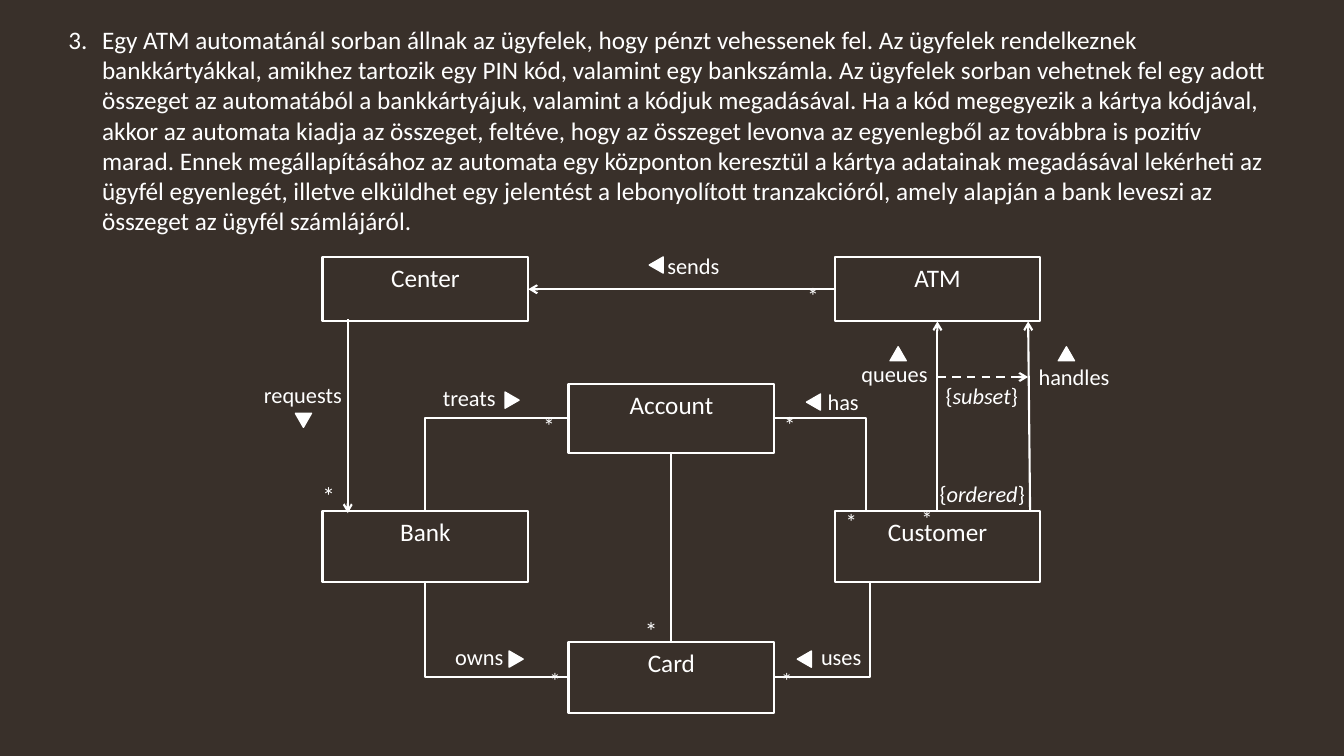
import pptx
import pptx.util
import pptx.dml.color
import pptx.enum.dml
import pptx.enum.shapes
import pptx.enum.text
import pptx.oxml.ns
import pptx.oxml.xmlchemy

Pt = pptx.util.Pt
SHAPES = pptx.enum.shapes.MSO_SHAPE
LINES = pptx.enum.shapes.MSO_CONNECTOR
ALIGN = pptx.enum.text.PP_ALIGN
BROWN = pptx.dml.color.RGBColor(0x39, 0x30, 0x2A)
WHITE = pptx.dml.color.RGBColor(0xFF, 0xFF, 0xFF)

TASK_LINES = [
    "3.\tEgy ATM automatánál sorban állnak az ügyfelek, hogy pénzt vehessenek fel. Az ügyfelek rendelkeznek",
    "bankkártyákkal, amikhez tartozik egy PIN kód, valamint egy bankszámla. Az ügyfelek sorban vehetnek fel egy adott",
    "összeget az automatából a bankkártyájuk, valamint a kódjuk megadásával. Ha a kód megegyezik a kártya kódjával,",
    "akkor az automata kiadja az összeget, feltéve, hogy az összeget levonva az egyenlegből az továbbra is pozitív",
    "marad. Ennek megállapításához az automata egy központon keresztül a kártya adatainak megadásával lekérheti az",
    "ügyfél egyenlegét, illetve elküldhet egy jelentést a lebonyolított tranzakcióról, amely alapján a bank leveszi az",
    "összeget az ügyfél számlájáról.",
]

CLASS_WIDTH = 147
LEFT, MIDDLE, RIGHT = 50.4, 226.1, 416.2
LEFT_EDGE, MIDDLE_EDGE = LEFT + CLASS_WIDTH, MIDDLE + CLASS_WIDTH
BANK_AXIS, CARD_AXIS = LEFT + CLASS_WIDTH / 2, MIDDLE + CLASS_WIDTH / 2
QUEUE_AXIS, HANDLE_AXIS, REQUEST_AXIS = 489.6, 554.4, 68.4
ATM_BOTTOM, BANK_TOP, BANK_BOTTOM = 53.6, 189, 240
ACCOUNT_BOTTOM, CARD_TOP = 147.3, 282.6
SENDS_LEVEL, ACCOUNT_LEVEL, CARD_LEVEL, SUBSET_LEVEL = 30.6, 122.8, 307.8, 93.3

CLASSES = [
    ("Center", LEFT, 7.6, 46),
    ("ATM", RIGHT, 7.6, 46),
    ("Account", MIDDLE, 98.3, 49),
    ("Bank", LEFT, BANK_TOP, 51),
    ("Customer", RIGHT, BANK_TOP, 51),
    ("Card", MIDDLE, CARD_TOP, 51),
]
ELBOWS = [
    (MIDDLE_EDGE, ACCOUNT_LEVEL, 438.5, BANK_TOP),
    (MIDDLE_EDGE, CARD_LEVEL, 441.4, BANK_BOTTOM),
    (MIDDLE, ACCOUNT_LEVEL, BANK_AXIS, BANK_TOP),
    (MIDDLE, CARD_LEVEL, BANK_AXIS, BANK_BOTTOM),
]
ARROWS = [
    (RIGHT, SENDS_LEVEL, LEFT_EDGE, SENDS_LEVEL),
    (REQUEST_AXIS, 52.2, REQUEST_AXIS, 190.5),
    (QUEUE_AXIS, BANK_TOP, QUEUE_AXIS, ATM_BOTTOM),
    (555.8, BANK_TOP, HANDLE_AXIS, ATM_BOTTOM),
]
ROLES = [
    ("queues", 427.7, 77.4, 62.6, 455.8, 71.7, 0),
    ("handles", 554.4, 79.6, 65.5, 576, 71.7, 0),
    ("sends", 289.4, 0.4, 51.8, 283, 8.3, 270),
    ("owns", 137.5, 279.8, 49.7, 182.9, 289.8, 90),
    ("has", 403.9, 97.6, 36.7, 395.3, 106.2, 270),
    ("requests", 0.7, 92.6, 71.3, 31, 119.2, 180),
    ("treats", 128.9, 94.7, 52.6, 180, 104.8, 90),
    ("uses", 398.9, 279.8, 43.9, 388.8, 289.8, 270),
]
CONSTRAINTS = [("subset", 487.4, 93.3, 67.7), ("ordered", 483.1, 163.1, 77)]
LOW_STARS = [(470.2, 166.7), (204.5, 281.9), (370.1, 281.9), (372.2, 99),
             (416.2, 168.9), (388.8, 6.9), (200.2, 99.8)]
PLAIN_STARS = [(43.2, 163.8), (273.6, 260.3)]


def add_run(paragraph, text, size, **formats):
    """Append a white Calibri run to the paragraph."""
    run = paragraph.add_run()
    run.text = text
    for name, value in {"name": "Calibri", "size": Pt(size), **formats}.items():
        setattr(run.font, name, value)
    run.font.color.rgb = WHITE
    return run


def add_label(slide, left, top, width, height, alignment=ALIGN.CENTER):
    """Add an unwrapped text box and return its paragraph."""
    frame = slide.shapes.add_textbox(Pt(left), Pt(top), Pt(width), Pt(height)).text_frame
    formats = {"word_wrap": False, "auto_size": pptx.enum.text.MSO_AUTO_SIZE.SHAPE_TO_FIT_TEXT}
    for name, value in formats.items():
        setattr(frame, name, value)
    frame.paragraphs[0].alignment = alignment
    return frame.paragraphs[0]


def add_class(slide, name, left, top, width, height):
    """Draw an outlined class box with its name at the top."""
    shape = slide.shapes.add_shape(SHAPES.RECTANGLE, Pt(left), Pt(top), Pt(width), Pt(height))
    shape.shadow.inherit = False
    shape.fill.background()
    shape.line.color.rgb = WHITE
    shape.line.width = Pt(1.5)
    shape.text_frame.vertical_anchor = pptx.enum.text.MSO_ANCHOR.TOP
    paragraph = shape.text_frame.paragraphs[0]
    paragraph.alignment = ALIGN.CENTER
    add_run(paragraph, name, 18)


def add_pointer(slide, left, top, rotation):
    """Draw the small triangle that gives a role its reading direction."""
    shape = slide.shapes.add_shape(SHAPES.ISOSCELES_TRIANGLE, Pt(left), Pt(top), Pt(11.5), Pt(10))
    shape.shadow.inherit = False
    shape.rotation = rotation
    shape.fill.solid()
    shape.fill.fore_color.rgb = WHITE
    shape.line.color.rgb = WHITE
    shape.line.width = Pt(1)


def add_link(slide, ends, arrow=False, elbow=False, dashed=False):
    """Draw a connector, optionally bent once, dashed or with an arrowhead."""
    kind = LINES.ELBOW if elbow else LINES.STRAIGHT
    link = slide.shapes.add_connector(kind, *[Pt(value) for value in ends])
    link.line.color.rgb = WHITE
    link.line.width = Pt(1.5)
    if dashed:
        link.line.dash_style = pptx.enum.dml.MSO_LINE.DASH
    properties = link._element.spPr
    if elbow:
        properties.find(pptx.oxml.ns.qn("a:prstGeom")).set("prst", "bentConnector2")
    if arrow:
        tail = pptx.oxml.xmlchemy.OxmlElement("a:tailEnd")
        tail.set("type", "arrow")
        link.line._get_or_add_ln().append(tail)
    properties.append(pptx.oxml.xmlchemy.OxmlElement("a:effectLst"))


def add_task(slide, left, top, width, height):
    """Write the numbered task with a hanging indent."""
    frame = slide.shapes.add_textbox(Pt(left), Pt(top), Pt(width), Pt(height)).text_frame
    frame.word_wrap = True
    paragraph = frame.paragraphs[0]
    properties = paragraph._p.get_or_add_pPr()
    properties.set("marL", str(Pt(24)))
    properties.set("indent", str(-Pt(24)))
    for index, line in enumerate(TASK_LINES):
        if index:
            paragraph.add_line_break()
        add_run(paragraph, line, 18)


def add_diagram(slide, left, top):
    """Draw the class diagram from its top left corner."""
    def shift(ends):
        """Move the two ends of a link into the diagram."""
        return [value + offset for value, offset in zip(ends, (left, top) * 2)]

    for name, x, y, height in CLASSES:
        add_class(slide, name, left + x, top + y, CLASS_WIDTH, height)
    for ends in ELBOWS:
        add_link(slide, shift(ends), elbow=True)
    for ends in ARROWS:
        add_link(slide, shift(ends), arrow=True)
    add_link(slide, shift((CARD_AXIS, CARD_TOP, CARD_AXIS, ACCOUNT_BOTTOM)))
    add_link(slide, shift((QUEUE_AXIS, SUBSET_LEVEL, HANDLE_AXIS, SUBSET_LEVEL)),
             arrow=True, dashed=True)
    for name, x, y, width, pointer_x, pointer_y, rotation in ROLES:
        add_run(add_label(slide, left + x, top + y, width, 26.6), name, 16)
        add_pointer(slide, left + pointer_x, top + pointer_y, rotation)
    for name, x, y, width in CONSTRAINTS:
        paragraph = add_label(slide, left + x, top + y, width, 26.6)
        for text, italic in (("{", False), (name, True), ("}", False)):
            add_run(paragraph, text, 16, italic=italic)
    for x, y in LOW_STARS:
        run = add_run(add_label(slide, left + x, top + y, 23.8, 30.2), "*", 28)
        run.font._element.set("baseline", "-10000")
    for x, y in PLAIN_STARS:
        add_run(add_label(slide, left + x, top + y, 23.8, 29, ALIGN.LEFT), "*", 18)


def main():
    """Build the slide and save it."""
    presentation = pptx.Presentation()
    presentation.slide_width = Pt(960)
    presentation.slide_height = Pt(540)
    slide = presentation.slides.add_slide(presentation.slide_layouts[6])
    slide.background.fill.solid()
    slide.background.fill.fore_color.rgb = BROWN
    add_diagram(slide, 180, 176)
    add_task(slide, 41.8, 13.7, 880.6, 160)
    presentation.save("out.pptx")


if __name__ == "__main__":
    main()
